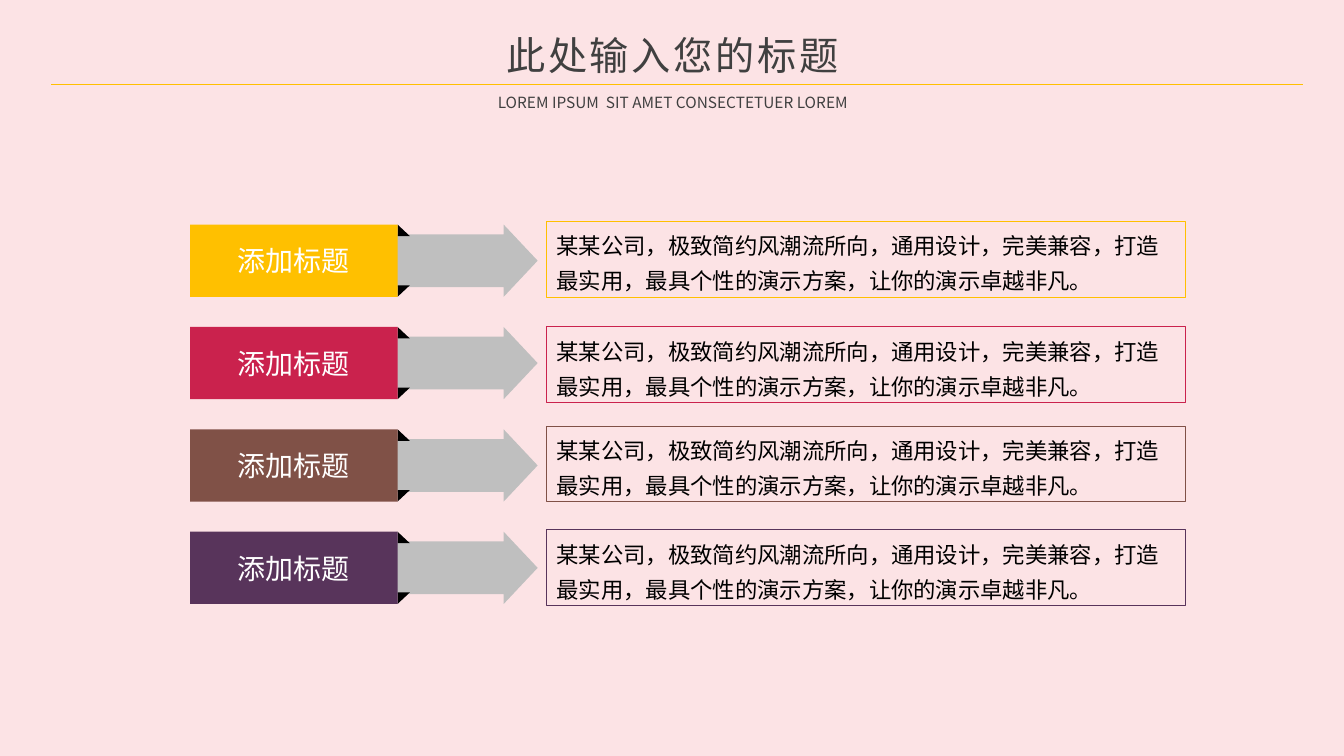
from lxml import etree
from pptx import Presentation
from pptx.dml.color import RGBColor
from pptx.enum.shapes import MSO_CONNECTOR, MSO_SHAPE
from pptx.enum.text import MSO_ANCHOR, MSO_AUTO_SIZE, PP_ALIGN
from pptx.oxml.ns import qn
from pptx.util import Cm, Pt

LINE = MSO_CONNECTOR.STRAIGHT
RECT = MSO_SHAPE.RECTANGLE
ROUND = MSO_SHAPE.ROUNDED_RECTANGLE
ARROW = MSO_SHAPE.RIGHT_ARROW
FOLD = MSO_SHAPE.RIGHT_TRIANGLE
MIDDLE = MSO_ANCHOR.MIDDLE
GROW = MSO_AUTO_SIZE.SHAPE_TO_FIT_TEXT
CENTER, LEFT = PP_ALIGN.CENTER, PP_ALIGN.LEFT

FONT = "Noto Sans CJK SC"
COLORS = {
    "back": "FCE3E5", "title": "404040", "arrow": "BFBFBF",
    "black": "000000", "white": "FFFFFF", "gold": "FFC000",
    "red": "CA224D", "brown": "805147", "plum": "58345B",
}
NOTE = "某某公司，极致简约风潮流所向，通用设计，完美兼容，打造最实用，最具个性的演示方案，让你的演示卓越非凡。"
ROWS = [
    ("gold", "添加标题", NOTE, -0.08),
    ("red", "添加标题", NOTE, 0),
    ("brown", "添加标题", NOTE, -0.08),
    ("plum", "添加标题", NOTE, -0.05),
]


def color(name):
    return RGBColor.from_string(COLORS[name])


def add_box(shapes, kind, x, y, w, h, fill=None, line=None):
    box = shapes.add_shape(kind, Cm(x), Cm(y), Cm(w), Cm(h))
    box.shadow.inherit = False
    if fill:
        box.fill.solid()
        box.fill.fore_color.rgb = color(fill)
    else:
        box.fill.background()
    if line:
        box.line.color.rgb = color(line)
        box.line.width = Pt(0.75)
    else:
        box.line.fill.background()
    return box


def put_text(box, text, size, tint, align=CENTER, track=0):
    frame = box.text_frame
    frame.word_wrap = True
    para = frame.paragraphs[0]
    para.text = text
    para.alignment = align
    font = para.font
    font.name = FONT
    font.size = Pt(size)
    font.color.rgb = color(tint)
    props = para._p.pPr.find(qn("a:defRPr"))
    etree.SubElement(props, qn("a:ea")).set("typeface", FONT)
    if track:
        props.set("spc", str(track * 100))
    return para


def add_head(slide, x, y, w):
    mid = x + w / 2
    title = add_box(slide.shapes, ROUND, mid - 5.69, y, 11.15, 1.4)
    title.adjustments[0] = 0.09
    title.text_frame.vertical_anchor = MIDDLE
    put_text(title, "此处输入您的标题", 28, "title", track=2)
    rule = slide.shapes.add_connector(
        LINE, Cm(x), Cm(y + 1.43), Cm(x + w), Cm(y + 1.43))
    rule.line.color.rgb = color("gold")
    rule.line.width = Pt(0.5)
    etree.SubElement(rule._element.spPr, qn("a:effectLst"))
    sub = slide.shapes.add_textbox(
        Cm(mid - 5.87), Cm(y + 1.53), Cm(11.53), Cm(0.74))
    put_text(sub, "LOREM IPSUM  SIT AMET CONSECTETUER LOREM", 11, "title")
    sub.text_frame.auto_size = GROW


def add_tag(slide, x, y, w, h, tint, label):
    group = slide.shapes.add_group_shape().shapes
    side = 0.29
    low = add_box(group, FOLD, x + w, y + h - side, 0.31, side, "black")
    low._element.spPr.xfrm.set("flipV", "1")
    add_box(group, FOLD, x + w, y, 0.31, side, "black")
    tag = add_box(group, RECT, x, y, w, h, tint)
    frame = tag.text_frame
    frame.margin_left = frame.margin_right = 0
    frame.margin_top = frame.margin_bottom = 0
    frame.vertical_anchor = MIDDLE
    put_text(tag, label, 20, "white")


def add_note(slide, x, y, w, h, tint, text):
    note = add_box(slide.shapes, RECT, x, y, w, h, line=tint)
    para = put_text(note, text, 16, "black", LEFT)
    para.line_spacing = 1.3
    para.space_before = para.space_after = Pt(6)
    note.text_frame.vertical_anchor = MIDDLE
    note.text_frame.auto_size = GROW


def add_row(slide, x, y, h, tint, label, text, shift):
    arrow = add_box(slide.shapes, ARROW, x + 2.9, y, 5.86, h, "arrow")
    arrow.adjustments[0] = 0.73
    arrow.adjustments[1] = 0.47
    add_tag(slide, x, y, 5.23, h, tint, label)
    add_note(slide, x + 8.99, y + shift, 16.1, 1.91, tint, text)


def main():
    deck = Presentation()
    deck.slide_width, deck.slide_height = Cm(33.87), Cm(19.05)
    slide = deck.slides.add_slide(deck.slide_layouts[6])
    slide.background.fill.solid()
    slide.background.fill.fore_color.rgb = color("back")
    add_head(slide, 1.29, 0.69, 31.55)
    for i, row in enumerate(ROWS):
        add_row(slide, 4.79, 5.66 + i * 2.58, 1.82, *row)
    deck.save("out.pptx")


if __name__ == "__main__":
    main()
